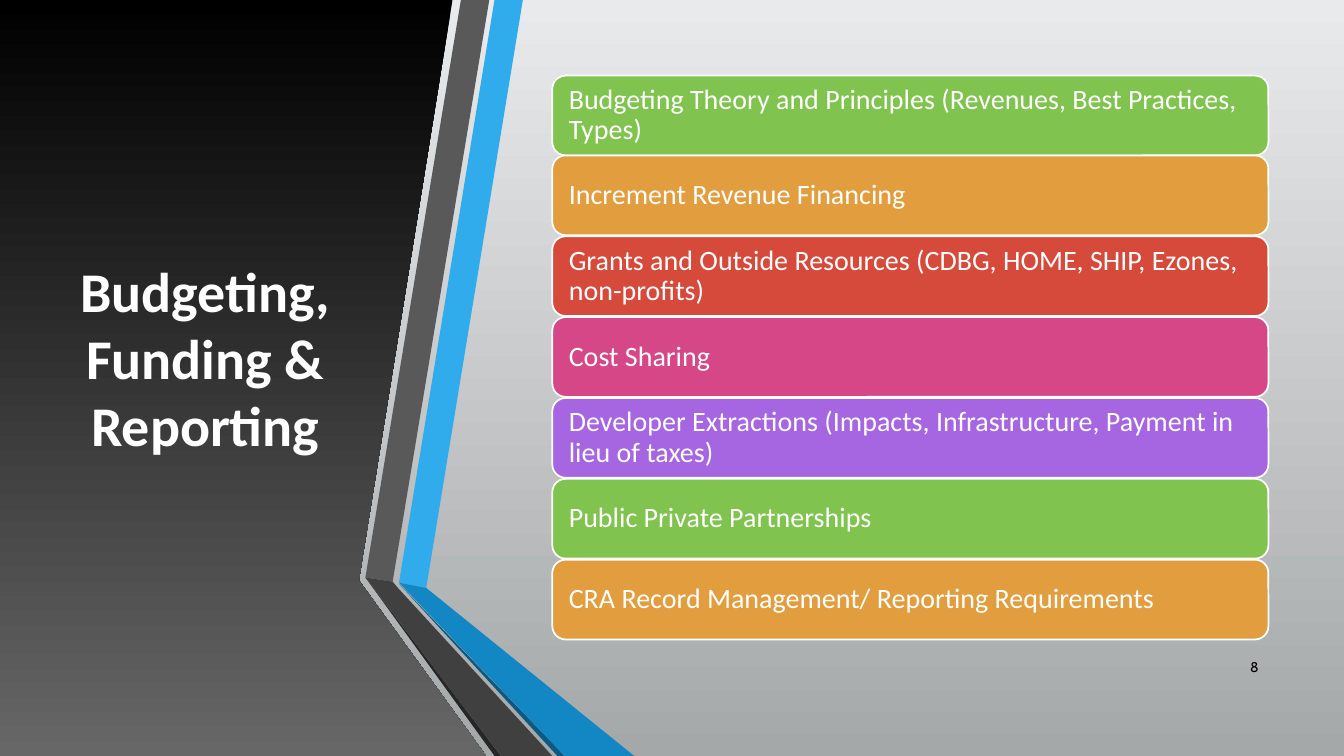
from pptx import Presentation
from pptx.dml.color import RGBColor
from pptx.enum.shapes import MSO_SHAPE
from pptx.enum.text import MSO_ANCHOR, PP_ALIGN
from pptx.util import Pt

PX = 9525
WIDE, HIGH = 1280, 720

ROUND = MSO_SHAPE.ROUNDED_RECTANGLE
MIDDLE = MSO_ANCHOR.MIDDLE
LEFT, CENTER, RIGHT = PP_ALIGN.LEFT, PP_ALIGN.CENTER, PP_ALIGN.RIGHT

WHITE = RGBColor(0xFF, 0xFF, 0xFF)
BLACK = RGBColor(0x00, 0x00, 0x00)
PALE = RGBColor(0xE9, 0xEA, 0xEB)
SILVER = RGBColor(0xA5, 0xA8, 0xA9)
GREY = RGBColor(0x67, 0x67, 0x67)
STEEL = RGBColor(0x59, 0x59, 0x59)
COAL = RGBColor(0x40, 0x40, 0x40)
SOOT = RGBColor(0x26, 0x26, 0x26)
SKY = RGBColor(0x30, 0xAC, 0xEC)
BLUE = RGBColor(0x12, 0x87, 0xC3)
NAVY = RGBColor(0x0C, 0x5A, 0x82)
GREEN = RGBColor(0x80, 0xC3, 0x4F)
AMBER = RGBColor(0xE2, 0x9D, 0x3E)
RED = RGBColor(0xD6, 0x4A, 0x3B)
PINK = RGBColor(0xD6, 0x47, 0x87)
VIOLET = RGBColor(0xA6, 0x66, 0xE1)

PANEL = [(0, 0), (431, 0), (342, 552), (342, 553), (463, 720), (0, 720)]
BANDS = [
    (SKY, [(380, 555), (406, 560), (498, 0), (471, 0)]),
    (STEEL, [(466, 0), (439, 0), (348, 550), (374, 554)]),
    (SOOT, [(348, 550), (471, 720), (477, 720)]),
    (NAVY, [(380, 556), (531, 720), (538, 720)]),
    (BLUE, [(380, 555), (538, 720), (604, 720), (406, 560)]),
    (COAL, [(526, 720), (379, 560), (374, 554), (348, 550), (477, 720)]),
]

TOPICS = [
    "Budgeting Theory and Principles (Revenues, Best Practices, Types)",
    "Increment Revenue Financing",
    "Grants and Outside Resources (CDBG, HOME, SHIP, Ezones, non-profits)",
    "Cost Sharing",
    "Developer Extractions (Impacts, Infrastructure, Payment in lieu of taxes)",
    "Public Private Partnerships",
    "CRA Record Management/ Reporting Requirements",
]
HUES = [GREEN, AMBER, RED, PINK, VIOLET]
ROW_TOP, ROW_SPAN = 72, 461


def box(*sides):
    return [side * PX for side in sides]


def shade(fill, top, bottom):
    """Fill with a gradient that runs straight down."""
    fill.gradient()
    fill.gradient_angle = 270
    for stop, color in zip(fill.gradient_stops, (top, bottom)):
        stop.color.rgb = color


def outline(slide, points):
    """Draw a closed polygon without a border."""
    pen = slide.shapes.build_freeform(*points[0], scale=PX)
    pen.add_line_segments(points[1:])
    shape = pen.convert_to_shape()
    shape.shadow.inherit = False
    shape.line.fill.background()
    return shape


def write(shape, text, font="Calibri", size=20, color=WHITE, bold=False,
          align=LEFT, pitch=1.0, inset=None):
    frame = shape.text_frame
    frame.word_wrap = True
    frame.vertical_anchor = MIDDLE
    if inset is not None:
        frame.margin_left = frame.margin_right = inset * PX
        frame.margin_top = frame.margin_bottom = inset * PX
    para = frame.paragraphs[0]
    para.alignment = align
    para.line_spacing = pitch
    run = para.add_run()
    run.text = text
    run.font.name = font
    run.font.size = Pt(size)
    run.font.bold = bold
    run.font.color.rgb = color


def label(slide, place, text, **style):
    write(slide.shapes.add_textbox(*box(*place)), text, **style)


def bar(slide, top, text, color):
    shape = slide.shapes.add_shape(ROUND, *box(526, top, 682, 76))
    shape.shadow.inherit = False
    shape.fill.solid()
    shape.fill.fore_color.rgb = color
    shape.line.color.rgb = WHITE
    shape.line.width = Pt(1.25)
    write(shape, text, pitch=0.9, inset=12)


def main():
    deck = Presentation()
    deck.slide_width, deck.slide_height = box(WIDE, HIGH)
    slide = deck.slides.add_slide(deck.slide_layouts[6])
    shade(slide.background.fill, PALE, SILVER)

    shade(outline(slide, PANEL).fill, BLACK, GREY)
    label(slide, (57, 72, 277, 536), "Budgeting, Funding & Reporting",
          size=40, bold=True, align=CENTER)

    for color, points in BANDS:
        band = outline(slide, points)
        band.fill.solid()
        band.fill.fore_color.rgb = color

    label(slide, (1150, 616, 58, 38), "8", font="Cabin", size=10,
          color=BLACK, align=RIGHT)

    for row, topic in enumerate(TOPICS):
        top = ROW_TOP + ROW_SPAN * row // (len(TOPICS) - 1)
        bar(slide, top, topic, HUES[row % len(HUES)])

    deck.save("out.pptx")


if __name__ == "__main__":
    main()
